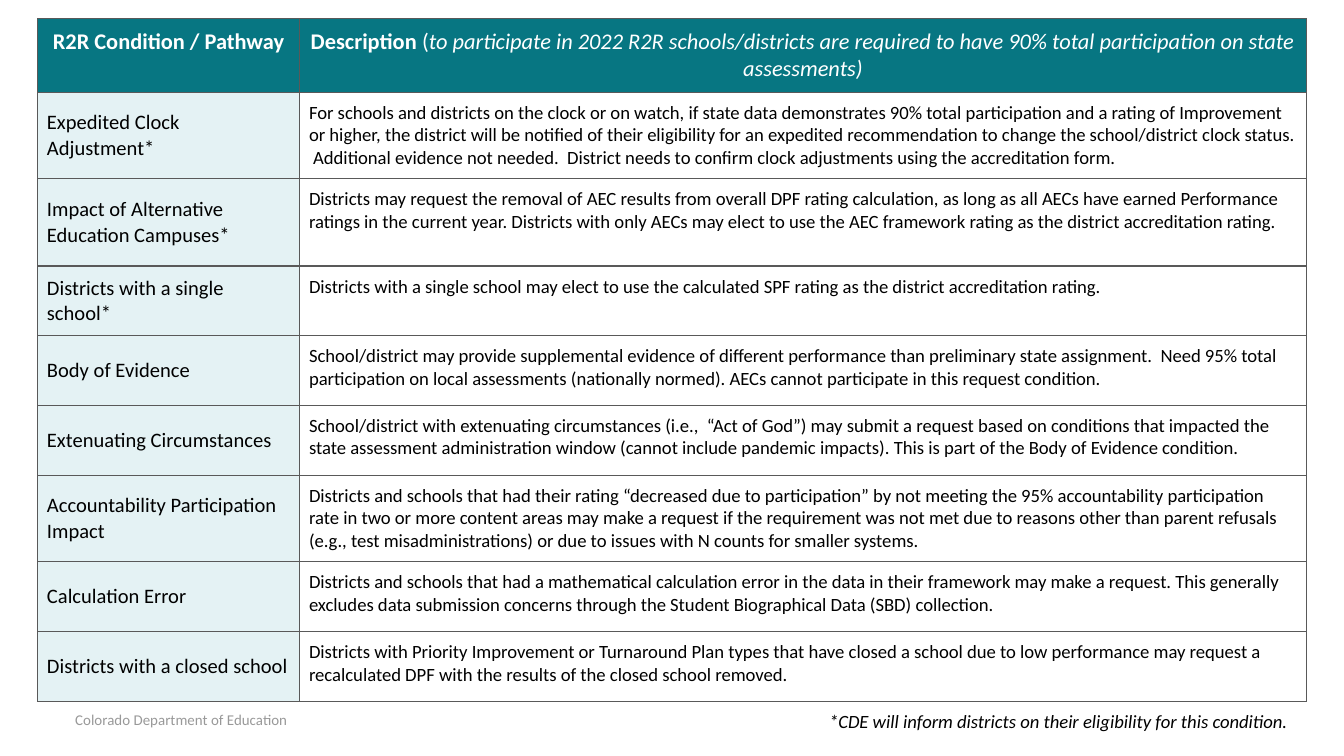
from pptx import Presentation
from pptx.dml.color import RGBColor as RGB
from pptx.enum.text import MSO_ANCHOR as Anchor, PP_ALIGN as Align
from pptx.oxml import parse_xml
from pptx.oxml.ns import nsdecls
from pptx.util import Inches, Pt

FONT = "Calibri"
WIDE, HIGH = 10, 10 * 9 / 16
COLORS = {"teal": "077682", "mint": "E4F2F4", "white": "FFFFFF",
          "black": "000000", "line": "595959", "gray": "999999"}

# Header cells: runs of (text, bold, italic)
HEAD = [
    [("R2R Condition / Pathway", True, False)],
    [("Description", True, False), (" (", False, False),
     ("to participate in 2022 R2R schools/districts are required to have 90% "
      "total participation on state assessments)", False, True)],
]
# Body rows: height, condition, description
ROWS = [
    (0.52, "Expedited Clock Adjustment*",
     "For schools and districts on the clock or on watch, if state data "
     "demonstrates 90% total participation and a rating of Improvement or "
     "higher, the district will be notified of their eligibility for an "
     "expedited recommendation to change the school/district clock status.  "
     "Additional evidence not needed.  District needs to confirm clock "
     "adjustments using the accreditation form."),
    (0.65, "Impact of Alternative Education Campuses*",
     "Districts may request the removal of AEC results from overall DPF rating "
     "calculation, as long as all AECs have earned Performance ratings in the "
     "current year. Districts with only AECs may elect to use the AEC framework "
     "rating as the district accreditation rating."),
    (0.38, "Districts with a single school*",
     "Districts with a single school may elect to use the calculated SPF rating "
     "as the district accreditation rating."),
    (0.52, "Body of Evidence",
     "School/district may provide supplemental evidence of different performance "
     "than preliminary state assignment.  Need 95% total participation on local "
     "assessments (nationally normed). AECs cannot participate in this request "
     "condition."),
    (0.52, "Extenuating Circumstances",
     "School/district with extenuating circumstances (i.e.,  “Act of God”) may "
     "submit a request based on conditions that impacted the state assessment "
     "administration window (cannot include pandemic impacts). This is part of "
     "the Body of Evidence condition."),
    (0.52, "Accountability Participation Impact",
     "Districts and schools that had their rating “decreased due to "
     "participation” by not meeting the 95% accountability participation rate in "
     "two or more content areas may make a request if the requirement was not met "
     "due to reasons other than parent refusals (e.g., test misadministrations) "
     "or due to issues with N counts for smaller systems."),
    (0.52, "Calculation Error",
     "Districts and schools that had a mathematical calculation error in the data "
     "in their framework may make a request. This generally excludes data "
     "submission concerns through the Student Biographical Data (SBD) collection."),
    (0.52, "Districts with a closed school",
     "Districts with Priority Improvement or Turnaround Plan types that have "
     "closed a school due to low performance may request a recalculated DPF with "
     "the results of the closed school removed."),
]
COLS = [1.95, 7.49]
HEAD_H = 0.45
# Notes: text, left, top, width, height, inset, size, color, italic
NOTES = [
    ("Colorado Department of Education", 0.56, 5.29, 3.23, 0.13, 0, 8, "gray", False),
    ("*CDE will inform districts on their eligibility for this condition.",
     6.07, 5.2, 3.65, 0.37, 0.1, 10, "black", True),
]


def style(run, size, color, bold=False, italic=False):
    font = run.font
    font.name, font.size = FONT, Pt(size)
    font.bold, font.italic = bold, italic
    font.color.rgb = RGB.from_string(COLORS[color])


def inset(box, gap):
    box.margin_left = box.margin_right = gap
    box.margin_top = box.margin_bottom = gap


def dress(cell, color):
    """Fill, inset and border of one cell."""
    inset(cell, Pt(5))
    cell.fill.solid()
    cell.fill.fore_color.rgb = RGB.from_string(COLORS[color])
    props = cell._tc.get_or_add_tcPr()
    for i, side in enumerate("LRTB"):
        line = parse_xml(f'<a:ln{side} {nsdecls("a")} w="{Pt(0.75)}"><a:solidFill>'
                         f'<a:srgbClr val="{COLORS["line"]}"/></a:solidFill></a:ln{side}>')
        props.insert(i, line)


deck = Presentation()
deck.slide_width, deck.slide_height = Inches(WIDE), Inches(HIGH)
slide = deck.slides.add_slide(deck.slide_layouts[6])

# Table grid
highs = [HEAD_H] + [row[0] for row in ROWS]
table = slide.shapes.add_table(
    len(highs), len(COLS), Inches(0.28), Inches(0.14),
    Inches(sum(COLS)), Inches(sum(highs))).table
table.horz_banding = False
for col, wide in zip(table.columns, COLS):
    col.width = Inches(wide)
for row, high in zip(table.rows, highs):
    row.height = Inches(high)

# Header row
for cell, runs in zip(table.rows[0].cells, HEAD):
    dress(cell, "teal")
    para = cell.text_frame.paragraphs[0]
    para.alignment = Align.CENTER
    for text, bold, italic in runs:
        run = para.add_run()
        run.text = text
        style(run, 12, "white", bold, italic)

# Body rows
LOOKS = [("mint", 11, Anchor.MIDDLE), ("white", 10, Anchor.TOP)]
for r, (_, *texts) in enumerate(ROWS, 1):
    for c, (text, (fill, size, anchor)) in enumerate(zip(texts, LOOKS)):
        cell = table.cell(r, c)
        dress(cell, fill)
        cell.vertical_anchor = anchor
        cell.text_frame.text = text
        style(cell.text_frame.paragraphs[0].runs[0], size, "black")

# Notes below the table
for text, x, y, w, h, gap, size, color, italic in NOTES:
    frame = slide.shapes.add_textbox(*map(Inches, (x, y, w, h))).text_frame
    frame.word_wrap = True
    inset(frame, Inches(gap))
    frame.text = text
    style(frame.paragraphs[0].runs[0], size, color, italic=italic)

deck.save("out.pptx")
